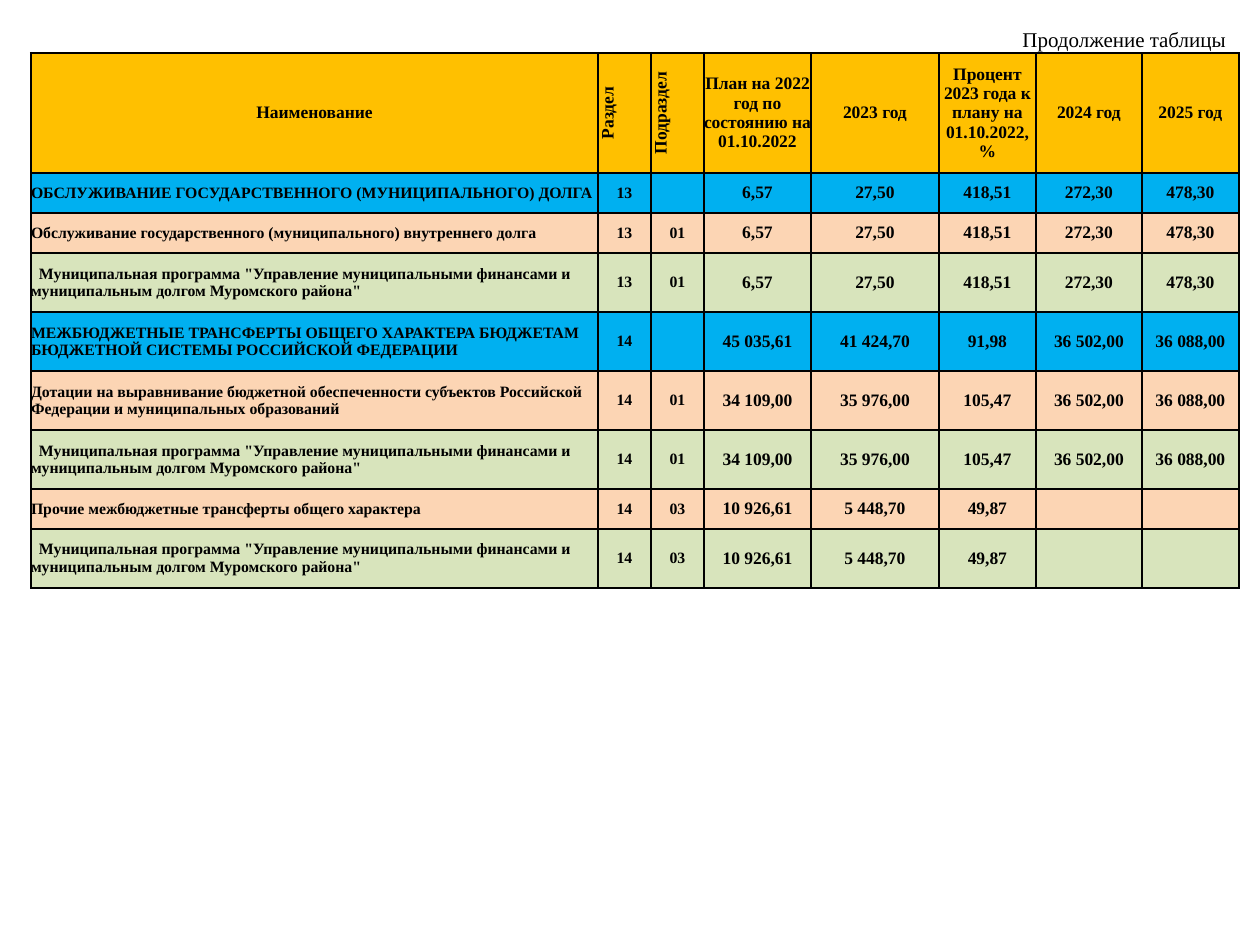
import pptx
import pptx.util
import pptx.dml.color
import pptx.enum.text
import lxml.etree

RGB = pptx.dml.color.RGBColor
BLACK = RGB(0, 0, 0)
GOLD = RGB(0xFF, 0xC0, 0x00)
BLUE = RGB(0x00, 0xB0, 0xF0)
PEACH = RGB(0xFC, 0xD5, 0xB4)
GREEN = RGB(0xD8, 0xE4, 0xBC)
FACE = "Times New Roman"
ALIGN = pptx.enum.text.PP_ALIGN
ANCHOR = pptx.enum.text.MSO_ANCHOR
SCALE = 914400 / 126
NS = "http://schemas.openxmlformats.org/drawingml/2006/main"


def px(n):
    return pptx.util.Emu(round(n * SCALE))


def write(par, text, size, bold, align):
    par.alignment = align
    run = par.add_run()
    run.text = text
    look = {"name": FACE, "size": pptx.util.Pt(size), "bold": bold}
    for key, val in look.items():
        setattr(run.font, key, val)
    run.font.color.rgb = BLACK


deck = pptx.Presentation()
deck.slide_width = px(1260)
deck.slide_height = px(945)
slide = deck.slides.add_slide(deck.slide_layouts[5])

title = slide.shapes.title
place = {"left": px(798), "top": px(27), "width": px(441), "height": px(25)}
for key, val in place.items():
    setattr(title, key, val)
frame = title.text_frame
form = {
    "margin_left": px(13), "margin_right": px(13),
    "margin_top": 0, "margin_bottom": 0, "word_wrap": True,
    "vertical_anchor": ANCHOR.TOP,
    "auto_size": pptx.enum.text.MSO_AUTO_SIZE.SHAPE_TO_FIT_TEXT,
}
for key, val in form.items():
    setattr(frame, key, val)
write(frame.paragraphs[0], "Продолжение таблицы", 12, False, ALIGN.RIGHT)

PLAN = 'Муниципальная программа "Управление муниципальными финансами и муниципальным долгом Муромского района"'
DEBT = ["6,57", "27,50", "418,51", "272,30", "478,30"]
GRANT = ["34 109,00", "35 976,00", "105,47", "36 502,00", "36 088,00"]
OTHER = ["10 926,61", "5 448,70", "49,87", "", ""]
rows = [
    (120, GOLD, ["Наименование", "Раздел", "Подраздел",
                 "План на 2022 год по состоянию на 01.10.2022", "2023 год",
                 "Процент 2023 года к плану на 01.10.2022, %", "2024 год", "2025 год"]),
    (40, BLUE, ["ОБСЛУЖИВАНИЕ ГОСУДАРСТВЕННОГО (МУНИЦИПАЛЬНОГО) ДОЛГА", "13", "", *DEBT]),
    (40, PEACH, ["Обслуживание государственного (муниципального) внутреннего долга",
                 "13", "01", *DEBT]),
    (59, GREEN, [PLAN, "13", "01", *DEBT]),
    (59, BLUE, ["МЕЖБЮДЖЕТНЫЕ ТРАНСФЕРТЫ ОБЩЕГО ХАРАКТЕРА БЮДЖЕТАМ БЮДЖЕТНОЙ СИСТЕМЫ РОССИЙСКОЙ ФЕДЕРАЦИИ",
                "14", "", "45 035,61", "41 424,70", "91,98", "36 502,00", "36 088,00"]),
    (59, PEACH, ["Дотации на выравнивание бюджетной обеспеченности субъектов Российской Федерации и муниципальных образований",
                 "14", "01", *GRANT]),
    (59, GREEN, [PLAN, "14", "01", *GRANT]),
    (40, PEACH, ["Прочие межбюджетные трансферты общего характера", "14", "03", *OTHER]),
    (59, GREEN, [PLAN, "14", "03", *OTHER]),
]
wide = [567, 53, 53, 107, 128, 97, 106, 97]
high = [row[0] for row in rows]

table = slide.shapes.add_table(
    len(rows), len(wide), px(31), px(53), px(sum(wide)), px(sum(high))).table
table.first_row = False
table.horz_banding = False
for col, width in zip(table.columns, wide):
    col.width = px(width)

inset = {"margin_left": 0, "margin_right": 0, "margin_top": 0,
         "margin_bottom": 0, "vertical_anchor": ANCHOR.MIDDLE}
for r, (height, tint, texts) in enumerate(rows):
    table.rows[r].height = px(height)
    for c, text in enumerate(texts):
        cell = table.cell(r, c)
        for key, val in inset.items():
            setattr(cell, key, val)
        props = cell._tc.get_or_add_tcPr()
        thick = {"L": c < 3, "R": c < 2, "T": c < 3, "B": False}
        for side, heavy in thick.items():
            width = pptx.util.Pt(1.5 if r == 0 and heavy else 1)
            line = lxml.etree.SubElement(props, f"{{{NS}}}ln{side}", w=str(width))
            fill = lxml.etree.SubElement(line, f"{{{NS}}}solidFill")
            lxml.etree.SubElement(fill, f"{{{NS}}}srgbClr", val=str(BLACK))
        cell.fill.solid()
        cell.fill.fore_color.rgb = tint
        if r == 0 and c in (1, 2):
            props.set("vert", "vert270")
        if not text:
            continue
        par = cell.text_frame.paragraphs[0]
        if text == PLAN:
            par._p.get_or_add_pPr().set("indent", str(px(8)))
        size = 10 if r == 0 or c > 2 else 9
        align = ALIGN.LEFT if r and c == 0 else ALIGN.CENTER
        write(par, text, size, True, align)

deck.save("out.pptx")
